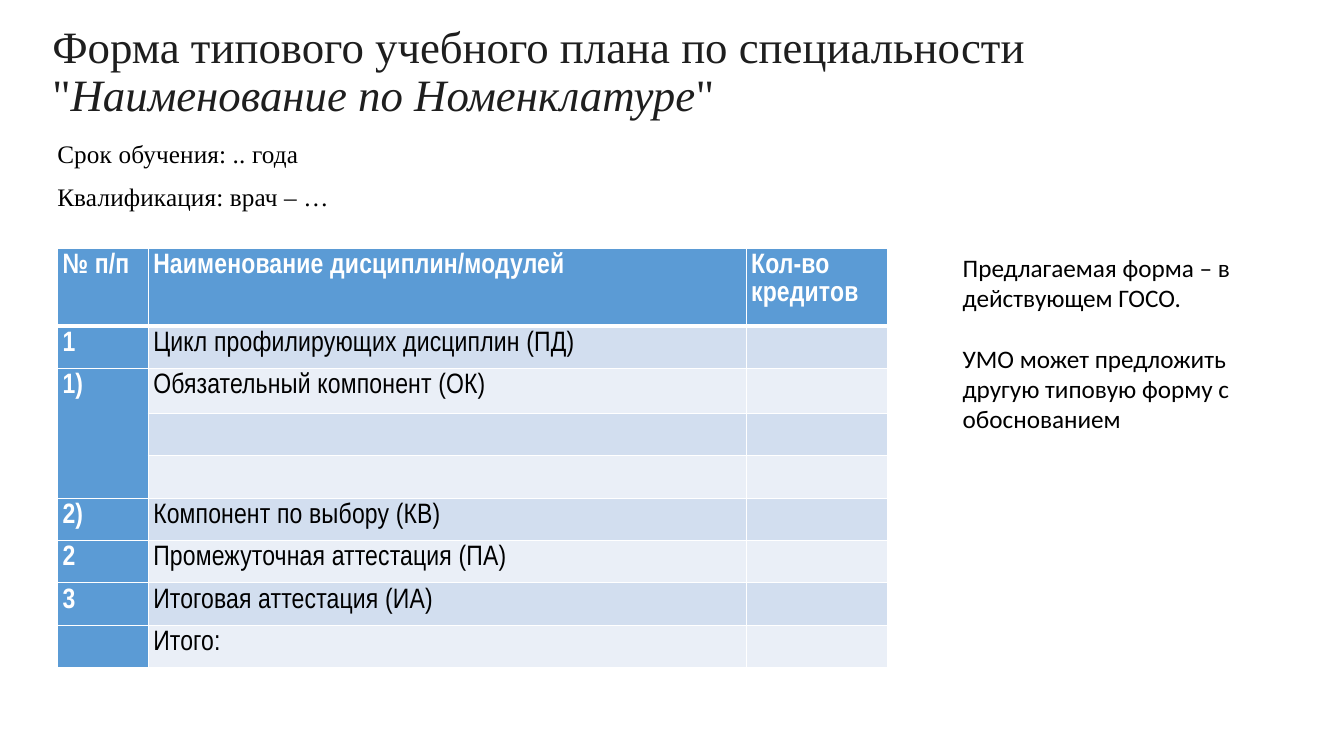
"""Builds the slide with the standard curriculum form for a medical specialty."""
import pptx
import pptx.enum.text
import pptx.util
from pptx.dml.color import RGBColor
from pptx.oxml import parse_xml
from pptx.oxml.ns import nsdecls

Inches = pptx.util.Inches
Pt = pptx.util.Pt

COLORS = {"title": "1E1E1E", "text": "000000", "white": "FFFFFF",
          "accent": "5B9BD5", "dark_band": "D2DEEF", "light_band": "EAEFF7"}
TITLE_LINES = [[("Форма типового учебного плана по специальности", False)],
               [('"', False), ("Наименование по Номенклатуре", True), ('"', False)]]
DETAILS = ["Срок обучения: .. года", "Квалификация: врач – …"]
NOTES = ["Предлагаемая форма – в действующем ГОСО.",
         "УМО может предложить другую типовую форму с обоснованием"]
PLAN = [("№ п/п", "Наименование дисциплин/модулей", "Кол-во кредитов"),
        ("1", "Цикл профилирующих дисциплин (ПД)", ""),
        ("1)", "Обязательный компонент (ОК)", ""),
        ("", "", ""),
        ("", "", ""),
        ("2)", "Компонент по выбору (КВ)", ""),
        ("2", "Промежуточная аттестация (ПА)", ""),
        ("3", "Итоговая аттестация (ИА)", ""),
        ("", "Итого:", "")]
MERGED_ROWS = (2, 4)
COLUMN_WIDTHS = (0.9, 5.93, 1.4)
HEADER_HEIGHT, COMPONENT_HEIGHT, ROW_HEIGHT = 0.77, 0.45, 0.42


def style_run(span, font, size, color, bold=False, italic=False, spacing=0):
    span.font.name, span.font.size = font, Pt(size)
    span.font.bold, span.font.italic = bold, italic
    span.font.color.rgb = RGBColor.from_string(COLORS[color])
    if spacing:
        span._r.get_or_add_rPr().set("spc", str(spacing))


def add_box(page, left, top, width, height):
    box = page.shapes.add_textbox(*map(Inches, (left, top, width, height)))
    box.text_frame.word_wrap = True
    return box.text_frame


def add_title(page):
    frame = add_box(page, 0.42, 0, 12.45, 1.45)
    frame.vertical_anchor = pptx.enum.text.MSO_ANCHOR.MIDDLE
    para = frame.paragraphs[0]
    para.line_spacing = 0.9
    for index, line in enumerate(TITLE_LINES):
        if index:
            para.add_line_break()
        for words, italic in line:
            span = para.add_run()
            span.text = words
            style_run(span, "Times New Roman", 32, "title", italic=italic)


def add_paragraphs(page, place, lines, font, spacing=0, **layout):
    frame = add_box(page, *place)
    frame.text = "\n".join(lines)
    for para in frame.paragraphs:
        for name, value in layout.items():
            setattr(para, name, value)
        style_run(para.runs[0], font, 18, "text", spacing=spacing)
    return frame


def add_border(cell, side, width):
    cell._tc.get_or_add_tcPr().append(parse_xml(
        f'<a:ln{side} {nsdecls("a")} w="{Pt(width)}"><a:solidFill>'
        f'<a:srgbClr val="{COLORS["white"]}"/></a:solidFill></a:ln{side}>'))


def style_cell(cell, row, column):
    heading = row == 0 or column == 0
    cell.margin_left = cell.margin_right = Inches(0.05)
    cell.margin_top = cell.margin_bottom = Inches(0.03)
    for side in "LRTB":
        thick = (row, side) in ((0, "B"), (1, "T"))
        add_border(cell, side, 3 if thick else 1)
    band = "dark_band" if row % 2 else "light_band"
    cell.fill.solid()
    cell.fill.fore_color.rgb = RGBColor.from_string(COLORS["accent" if heading else band])
    para = cell.text_frame.paragraphs[0]
    para.line_spacing, para.space_after = 1.07, Pt(8)
    for span in para.runs:
        style_run(span, "Arial Narrow", 20, "white" if heading else "text",
                  bold=heading, spacing=10)


def add_plan(page):
    heights = [HEADER_HEIGHT] + [ROW_HEIGHT] * (len(PLAN) - 1)
    heights[MERGED_ROWS[0]] = COMPONENT_HEIGHT
    table = page.shapes.add_table(
        len(PLAN), len(COLUMN_WIDTHS), Inches(0.57), Inches(2.46),
        Inches(sum(COLUMN_WIDTHS)), Inches(sum(heights))).table
    for column, width in zip(table.columns, COLUMN_WIDTHS):
        column.width = Inches(width)
    for row, (height, entries) in enumerate(zip(heights, PLAN)):
        table.rows[row].height = Inches(height)
        for column, words in enumerate(entries):
            cell = table.cell(row, column)
            cell.text = words
            style_cell(cell, row, column)
    first, last = MERGED_ROWS
    table.cell(first, 0).merge(table.cell(last, 0))


def main():
    deck = pptx.Presentation()
    deck.slide_width, deck.slide_height = Inches(13.33), Inches(7.5)
    page = deck.slides.add_slide(deck.slide_layouts[6])
    add_title(page)
    add_paragraphs(page, (0.47, 1.3, 4.68, 0.85), DETAILS, "Times New Roman",
                   spacing=10, line_spacing=1.07, space_after=Pt(8))
    add_plan(page)
    notes = add_paragraphs(page, (9.45, 2.45, 3.04, 1.92), NOTES, "Calibri")
    notes.paragraphs[1].space_before = Pt(22)
    deck.save("out.pptx")


if __name__ == "__main__":
    main()
